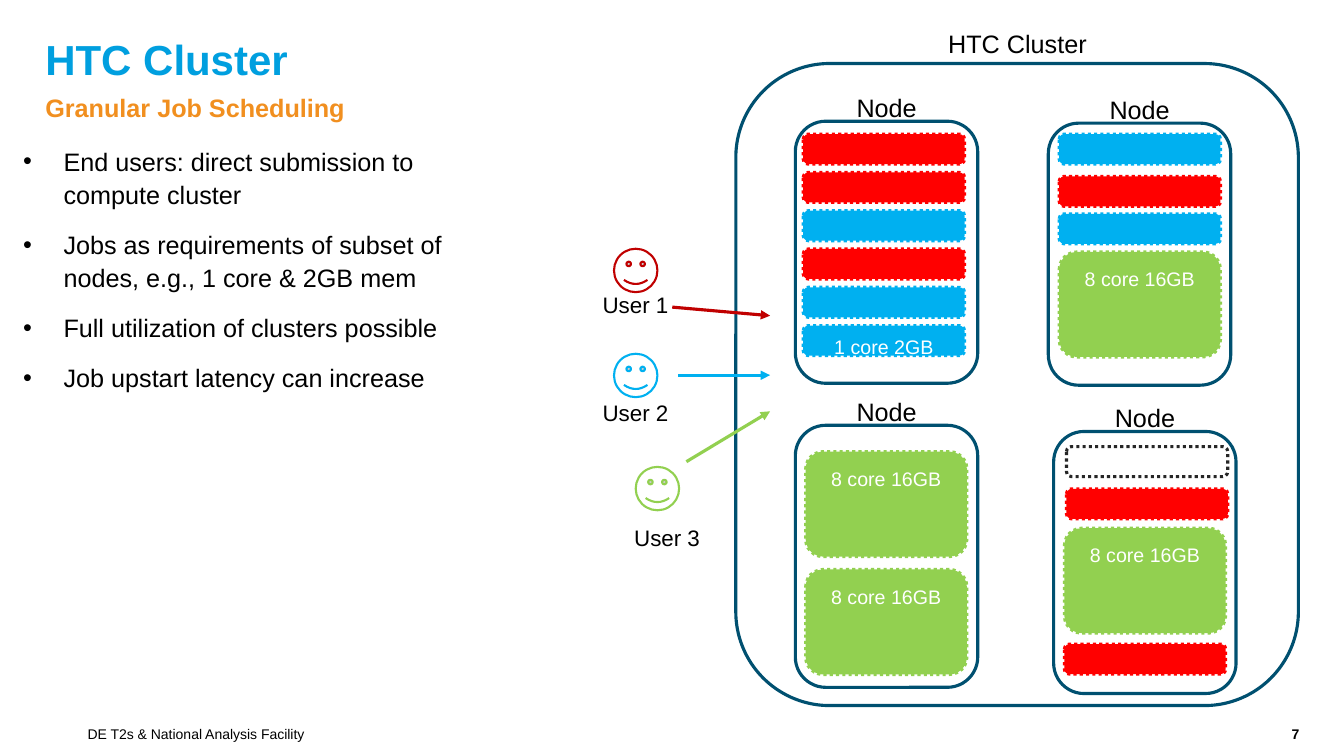
from lxml.etree import SubElement
from pptx import Presentation
from pptx.dml.color import RGBColor
from pptx.enum.dml import MSO_LINE
from pptx.enum.shapes import MSO_CONNECTOR, MSO_SHAPE
from pptx.enum.text import MSO_ANCHOR, PP_ALIGN
from pptx.oxml.ns import qn
from pptx.util import Pt

COLOURS = {
    "black": "000000",
    "white": "FFFFFF",
    "title": "009FDF",
    "subtitle": "F18F1F",
    "frame": "005070",
    "dark red": "C00000",
    "red": "FF0000",
    "blue": "00B0F0",
    "green": "92D050",
    "free": "262626",
}
TILE_WIDTH = 115.2
CORE_HEIGHT = 21.4
BLOCK_HEIGHT = 75
CORE_STEP = 27.36


class SlideBuilder:
    """Draws styled elements on the current slide, with lengths in points."""

    def __init__(self, page, font="Arial"):
        self.page = page
        self.font = font

    def colour(self, name):
        return RGBColor.from_string(COLOURS[name])

    def text(self, place, lines, size, colour="black", bold=False, align=PP_ALIGN.LEFT,
             anchor=MSO_ANCHOR.TOP, inset=0, spacing=1.0, bullets=False):
        box = self.page.shapes.add_textbox(*map(Pt, place))
        frame = box.text_frame
        frame.word_wrap = True
        frame.vertical_anchor = anchor
        frame.margin_left = frame.margin_right = Pt(inset)
        frame.margin_top = frame.margin_bottom = Pt(inset)
        for index, line in enumerate(lines):
            para = frame.paragraphs[0] if index == 0 else frame.add_paragraph()
            if bullets:
                self.bullet(para)
            para.alignment = align
            para.line_spacing = spacing
            if index:
                para.space_before = Pt(12)
            span = para.add_run()
            span.text = line
            span.font.name = self.font
            span.font.size = Pt(size)
            span.font.bold = bold
            span.font.color.rgb = self.colour(colour)

    def bullet(self, para, indent=28.8):
        properties = para._p.get_or_add_pPr()
        properties.set("marL", str(Pt(indent)))
        properties.set("indent", str(-Pt(indent)))
        SubElement(properties, qn("a:buFont"), typeface=self.font)
        SubElement(properties, qn("a:buChar"), char="•")

    def label(self, place, line, size, colour="black"):
        self.text(place, [line], size, colour, align=PP_ALIGN.CENTER, inset=3.6)

    def shape(self, kind, place, fill, line, width=2.25, dotted=False):
        shape = self.page.shapes.add_shape(kind, *map(Pt, place))
        shape.shadow.inherit = False
        shape.fill.solid()
        shape.fill.fore_color.rgb = self.colour(fill)
        shape.line.color.rgb = self.colour(line)
        shape.line.width = Pt(width)
        if dotted:
            shape.line.dash_style = MSO_LINE.ROUND_DOT

    def frame(self, place):
        self.shape(MSO_SHAPE.ROUNDED_RECTANGLE, place, "white", "frame")

    def node(self, left, top):
        self.frame((left, top, 130.3, 187.2))
        self.label((left + 16.6, top - 24.2, 97.2, 27), "Node", 18)

    def job(self, left, top, colour, caption=None):
        height = BLOCK_HEIGHT if colour == "green" else CORE_HEIGHT
        fill = "white" if colour == "free" else colour
        self.shape(MSO_SHAPE.ROUNDED_RECTANGLE, (left, top, TILE_WIDTH, height),
                   fill, colour, dotted=True)
        if colour == "green":
            self.label((left, top + 7.2, TILE_WIDTH, 23), "8 core 16GB", 14, "white")
        elif caption:
            self.label((left, top + 2.9, TILE_WIDTH, 23), caption, 14, "white")

    def user(self, name, colour, face, caption, arrow):
        self.shape(MSO_SHAPE.SMILEY_FACE, (*face, 31, 31), "white", colour, 1.5)
        self.label((*caption, 80, 24.5), name, 16)
        self.arrow(arrow, colour)

    def arrow(self, ends, colour):
        arrow = self.page.shapes.add_connector(MSO_CONNECTOR.STRAIGHT, *map(Pt, ends))
        arrow.line.color.rgb = self.colour(colour)
        arrow.line.width = Pt(2.25)
        SubElement(arrow.line._get_or_add_ln(), qn("a:tailEnd"), type="triangle")
        SubElement(arrow._element.spPr, qn("a:effectLst"))


def main():
    deck = Presentation()
    deck.slide_width, deck.slide_height = Pt(960), Pt(540)
    builder = SlideBuilder(deck.slides.add_slide(deck.slide_layouts[6]))

    builder.text((32.4, 26.6, 895.7, 35.3), ["HTC Cluster"], 30, "title", bold=True,
                 anchor=MSO_ANCHOR.MIDDLE, spacing=0.9)
    builder.text((32.4, 64.1, 895.7, 29.5), ["Granular Job Scheduling"], 18, "subtitle",
                 bold=True, spacing=1.1)
    builder.text((16.6, 102.2, 352.8, 394.6), [
        "End users: direct submission to compute cluster",
        "Jobs as requirements of subset of nodes, e.g., 1 core & 2GB mem",
        "Full utilization of clusters possible",
        "Job upstart latency can increase",
    ], 18, spacing=1.1, bullets=True)
    builder.text((62.6, 518.4, 783.4, 11), ["DE T2s & National Analysis Facility"], 10)
    builder.text((918, 518.4, 10.1, 11), ["7"], 10, bold=True, align=PP_ALIGN.RIGHT)

    builder.frame((525.6, 45.4, 401.8, 458.6))
    builder.label((623.5, 16.6, 206.6, 27), "HTC Cluster", 18)
    for corner in ((568.1, 86.6), (748.8, 88), (568.1, 303.8), (752.6, 308.2)):
        builder.node(*corner)

    core_jobs = ("red", "red", "blue", "red", "blue", "blue")
    for row, colour in enumerate(core_jobs):
        caption = "1 core 2GB" if row == len(core_jobs) - 1 else None
        builder.job(573.8, 95.8 + row * CORE_STEP, colour, caption)
    for left, top, colour in (
        (756.6, 95.8, "blue"), (756.6, 126, "red"),
        (756.6, 152.8, "blue"), (756.6, 180, "green"),
        (575.5, 322.6, "green"), (575.5, 406.8, "green"),
        (761.8, 319, "free"), (761.8, 349.2, "red"),
        (760.3, 377.3, "green"), (760.3, 460.1, "red"),
    ):
        builder.job(left, top, colour)

    for name, colour, face, caption, arrow in (
        ("User 1", "dark red", (438.6, 177.7), (414, 204.5), (480.2, 219.4, 550.1, 225.5)),
        ("User 2", "blue", (438.6, 252.7), (414, 281.7), (484.6, 268, 550.1, 268)),
        ("User 3", "green", (454.1, 333.5), (436.5, 370.8), (490.3, 329.8, 550.1, 293.8)),
    ):
        builder.user(name, colour, face, caption, arrow)

    deck.save("out.pptx")


if __name__ == "__main__":
    main()
